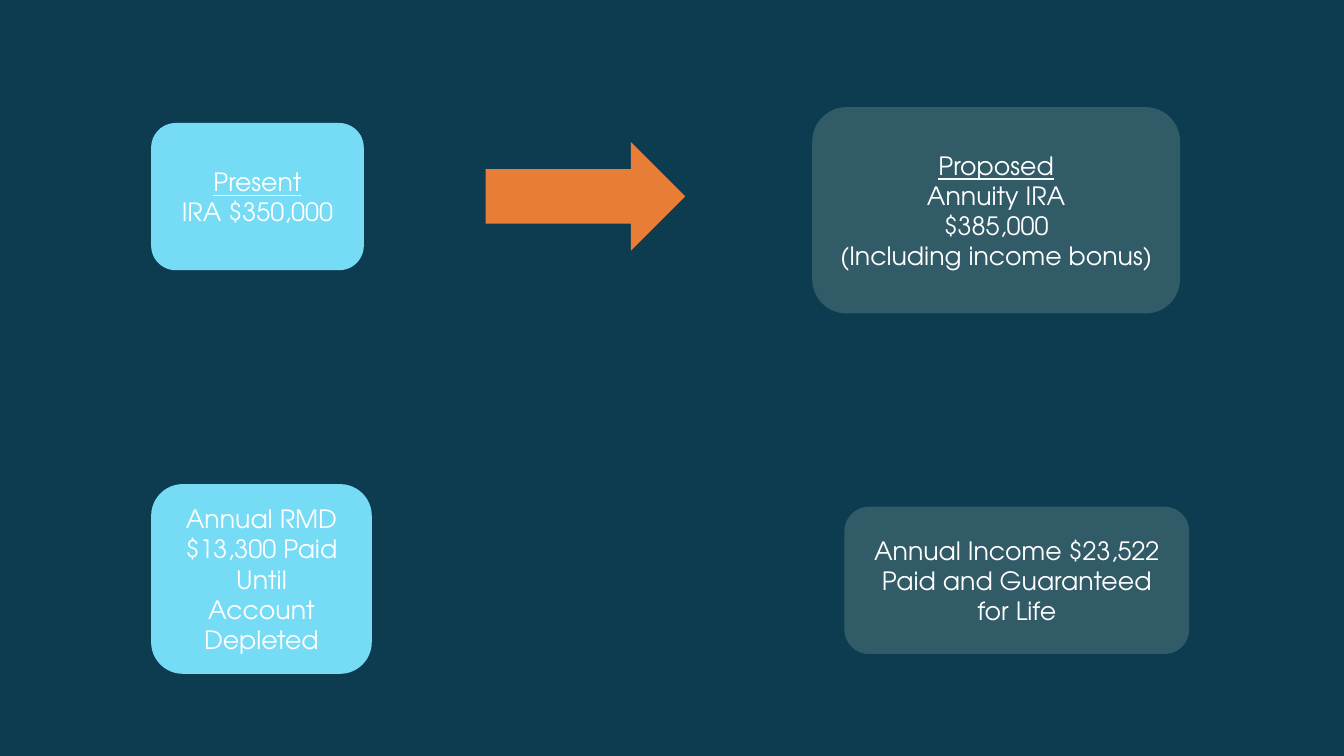
from pptx import Presentation
from pptx import util as u
from pptx.dml.color import RGBColor
from pptx.enum import shapes, text

COLORS = {
    "background": "0D3C51",
    "present": "76DBF4",
    "proposed": "325B68",
    "arrow": "E87D37",
    "text": "FFFFFF",
}
FONT = "TeX Gyre Adventor"
TEXT_SIZE = 18

# color, heading, lines, (left, top, width, height) in cm
PLANS = [
    ("present", "Present", ["IRA $350,000"], (3.81, 3.1, 5.36, 3.71)),
    ("present", None, ["Annual RMD", "$13,300 Paid Until", "Account Depleted"],
     (3.81, 12.2, 5.56, 4.78)),
    ("proposed", "Proposed", ["Annuity IRA", "$385,000", "(Including income bonus)"],
     (20.47, 2.7, 9.27, 5.2)),
    ("proposed", None, ["Annual Income $23,522 Paid and Guaranteed\vfor Life"],
     (21.28, 12.77, 8.69, 3.71)),
]
ARROW = (12.24, 3.58, 5.03, 2.74)


def rgb(name):
    return RGBColor.from_string(COLORS[name])


def add_block(slide, kind, box, color):
    block = slide.shapes.add_shape(kind, *(u.Cm(length) for length in box))
    block.shadow.inherit = False
    block.fill.solid()
    block.fill.fore_color.rgb = rgb(color)
    block.line.fill.background()
    return block


def add_plan(slide, color, heading, lines, box):
    plan = add_block(slide, shapes.MSO_SHAPE.ROUNDED_RECTANGLE, box, color)
    frame = plan.text_frame
    frame.word_wrap = True
    frame.vertical_anchor = text.MSO_ANCHOR.MIDDLE
    frame.text = "\n".join([heading] + lines if heading else lines)
    for paragraph in frame.paragraphs:
        paragraph.alignment = text.PP_ALIGN.CENTER
        for run in paragraph.runs:
            run.font.name = FONT
            run.font.size = u.Pt(TEXT_SIZE)
            run.font.color.rgb = rgb("text")
            run.font.underline = run.text == heading


def main():
    """Build the slide comparing the present IRA with the proposed annuity."""
    deck = Presentation()
    deck.slide_width, deck.slide_height = u.Cm(33.87), u.Cm(19.05)
    slide = deck.slides.add_slide(deck.slide_layouts[6])
    slide.background.fill.solid()
    slide.background.fill.fore_color.rgb = rgb("background")
    for plan in PLANS:
        add_plan(slide, *plan)
    add_block(slide, shapes.MSO_SHAPE.RIGHT_ARROW, ARROW, "arrow")
    deck.save("out.pptx")


if __name__ == "__main__":
    main()
